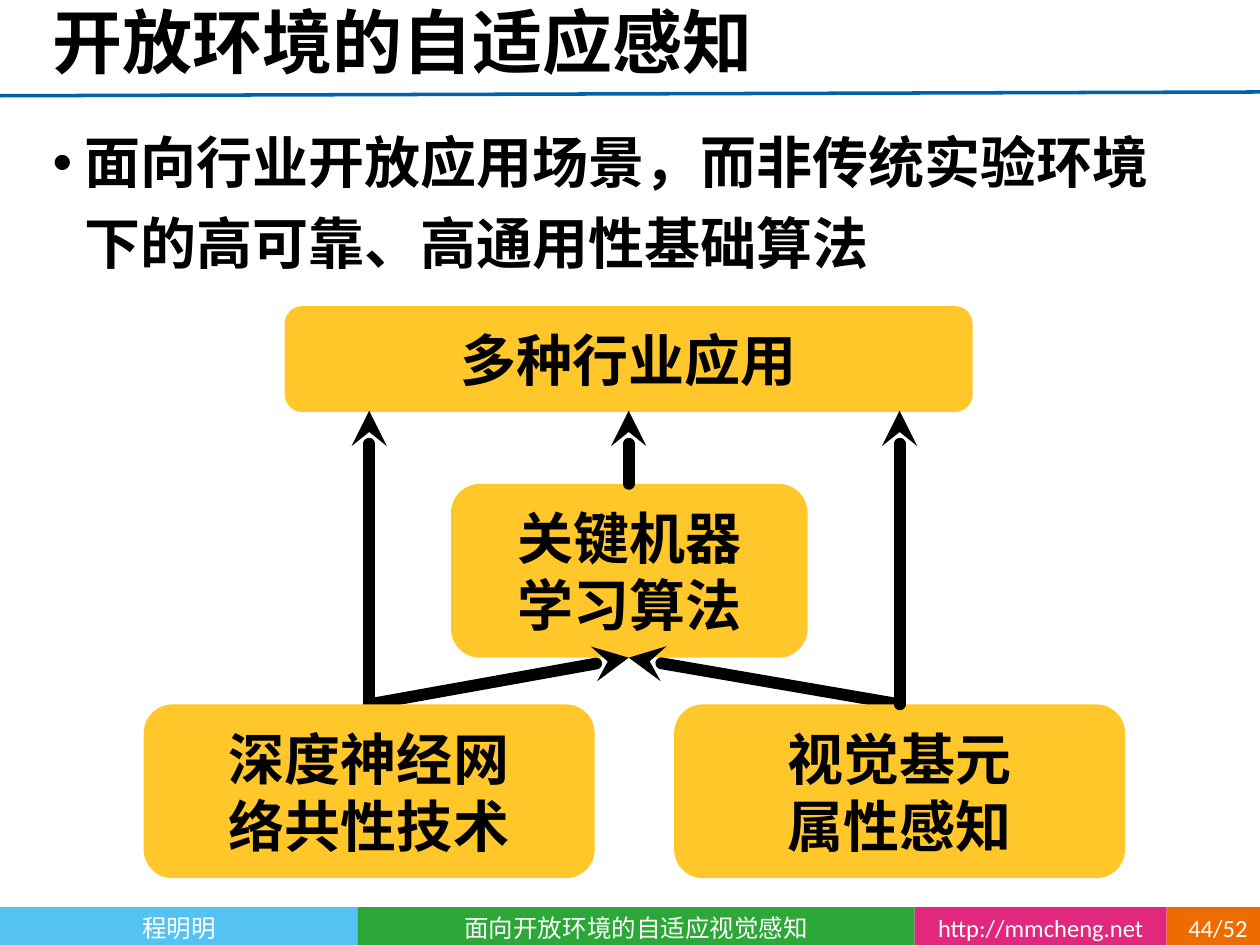
from lxml import etree
from pptx import Presentation
from pptx.dml.color import RGBColor
from pptx.enum import shapes, text
from pptx.oxml.ns import qn
from pptx.util import Inches, Pt

SHAPE = shapes.MSO_SHAPE
ALIGN = text.PP_ALIGN
ANCHOR = text.MSO_ANCHOR


def write(shape, content, size=32, color="000000", bold=True, align=ALIGN.CENTER,
          anchor=ANCHOR.MIDDLE, spacing=None, bullet=None):
    """Fill a shape with text, one paragraph per line, all in one format."""
    frame = shape.text_frame
    frame.text = content
    frame.word_wrap = True
    frame.auto_size = text.MSO_AUTO_SIZE.NONE
    frame.vertical_anchor = anchor
    for paragraph in frame.paragraphs:
        paragraph.alignment = align
        if spacing:
            paragraph.line_spacing = spacing
        if bullet:
            properties = paragraph._p.get_or_add_pPr()
            properties.set("marL", str(Inches(0.25)))
            properties.set("indent", str(-Inches(0.25)))
            etree.SubElement(properties, qn("a:buFont"), typeface="Arial")
            etree.SubElement(properties, qn("a:buChar"), char=bullet)
        for run in paragraph.runs:
            run.font.size = Pt(size)
            run.font.bold = bold
            run.font.name = "Calibri"
            run.font.color.rgb = RGBColor.from_string(color)
            etree.SubElement(run._r.get_or_add_rPr(), qn("a:ea"), typeface="Calibri")


def add_line(start, end, color, width, arrow=False):
    line = slide.shapes.add_connector(
        shapes.MSO_CONNECTOR.STRAIGHT, *(Inches(value) for value in start + end))
    line.line.color.rgb = RGBColor.from_string(color)
    line.line.width = Pt(width)
    if arrow:
        outline = line.line._get_or_add_ln()
        outline.set("cap", "rnd")
        etree.SubElement(outline, qn("a:round"))
        etree.SubElement(outline, qn("a:headEnd"), type="stealth")
    etree.SubElement(line._element.spPr, qn("a:effectLst"))


presentation = Presentation()
presentation.slide_width = Inches(10)
presentation.slide_height = Inches(7.5)
slide = presentation.slides.add_slide(presentation.slide_layouts[5])

# Footer bar
footer = [
    ("程明明", 0, 2.84, "54C3F4", ALIGN.CENTER),
    ("面向开放环境的自适应视觉感知", 2.84, 4.42, "2CA738", ALIGN.CENTER),
    ("http://mmcheng.net", 7.26, 2, "E2287E", ALIGN.CENTER),
    ("44/52", 9.26, 0.74, "ED6C00", ALIGN.RIGHT),
]
for label, left, width, color, align in footer:
    cell = slide.shapes.add_shape(
        SHAPE.RECTANGLE, Inches(left), Inches(7.2), Inches(width), Inches(0.34))
    cell.shadow.inherit = False
    cell.fill.solid()
    cell.fill.fore_color.rgb = RGBColor.from_string(color)
    cell.line.fill.background()
    write(cell, label, size=14, color="FFFFFF", bold=False, align=align, anchor=ANCHOR.TOP)

# Title and rule
add_line((0, 0.76), (10, 0.73), "0062AC", 2)
title = slide.shapes.title
title.left, title.top = Inches(0.32), Inches(0)
title.width, title.height = Inches(9.68), Inches(0.73)
write(title, "开放环境的自适应感知", size=40, align=ALIGN.LEFT, spacing=0.9)

body = slide.shapes.add_textbox(Inches(0.32), Inches(0.86), Inches(9.31), Inches(1.5))
write(body, "面向行业开放应用场景，而非传统实验环境下的高可靠、高通用性基础算法",
      align=ALIGN.LEFT, anchor=ANCHOR.TOP, spacing=1.2, bullet="•")

# Diagram: arrows point from the base boxes up to the applications
left_x, center_x, right_x = 2.93, 4.99, 7.14
application_bottom, algorithm_top, algorithm_bottom, base_top = 3.26, 3.84, 5.22, 5.59
boxes = [
    ("关键机器\n学习算法", 3.58, algorithm_top, 2.83, 1.38),
    ("多种行业应用", 2.26, 2.43, 5.46, 0.84),
    ("深度神经网\n络共性技术", 1.14, base_top, 3.58, 1.38),
    ("视觉基元\n属性感知", 5.35, base_top, 3.58, 1.38),
]
arrows = [
    ((center_x, algorithm_bottom), (left_x, base_top)),
    ((center_x, algorithm_bottom), (right_x, base_top)),
    ((center_x, application_bottom), (center_x, algorithm_top)),
    ((left_x, application_bottom), (left_x, base_top)),
    ((right_x, application_bottom), (right_x, base_top)),
]
# The base boxes cover the ends of every arrow but the last
layers = boxes[:2] + arrows[:4] + boxes[2:] + arrows[4:]
for layer in layers:
    if layer in arrows:
        add_line(*layer, "000000", 6.75, arrow=True)
        continue
    label, *place = layer
    box = slide.shapes.add_shape(
        SHAPE.ROUNDED_RECTANGLE, *(Inches(value) for value in place))
    box.shadow.inherit = False
    box.fill.solid()
    box.fill.fore_color.rgb = RGBColor.from_string("FFC729")
    box.line.fill.background()
    write(box, label)

presentation.save("out.pptx")
